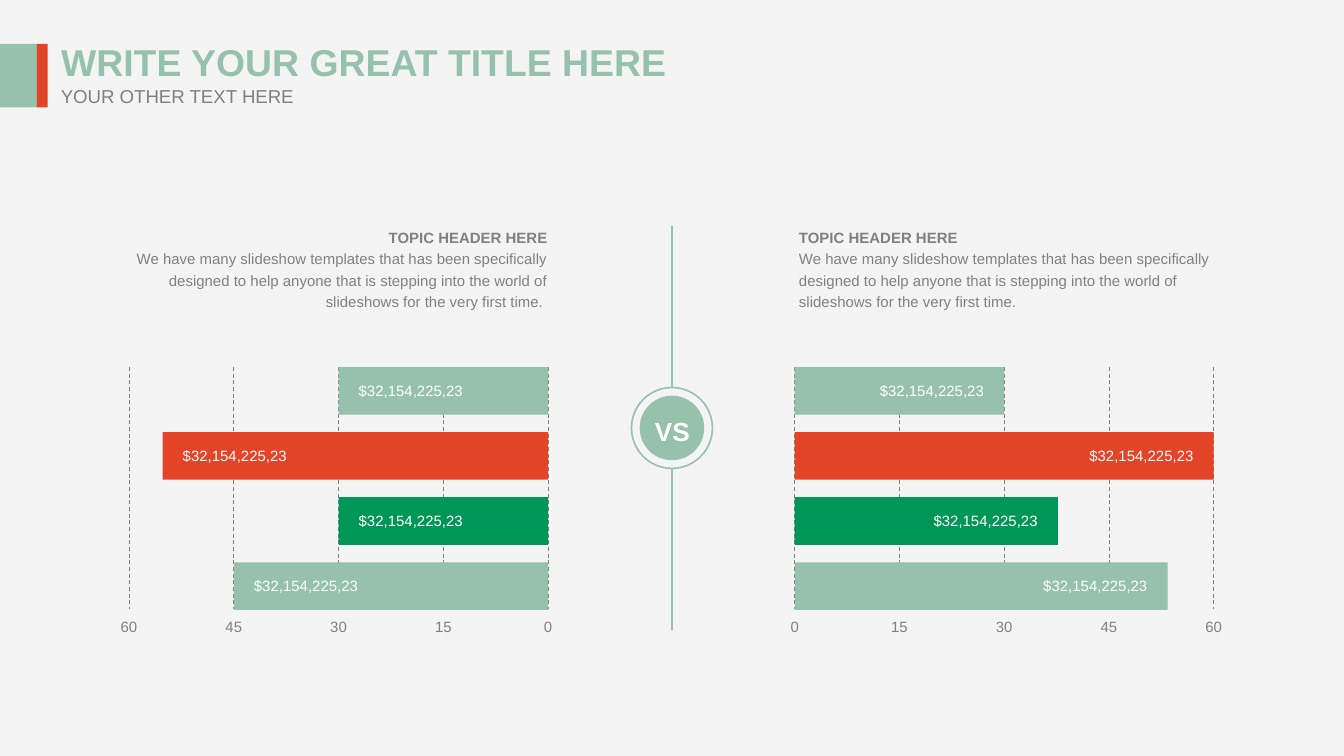
from lxml import etree
from pptx import Presentation
from pptx import util as u
from pptx.dml.color import RGBColor
from pptx.enum import dml, shapes, text
from pptx.oxml.ns import qn

SAGE = RGBColor(0x95, 0xC1, 0xAD)
RED = RGBColor(0xE3, 0x43, 0x26)
GREEN = RGBColor(0x00, 0x96, 0x58)
GRAY = RGBColor(0x80, 0x80, 0x80)
WHITE = RGBColor(0xFF, 0xFF, 0xFF)
BACKGROUND = RGBColor(0xF4, 0xF4, 0xF4)
LEFT, CENTER, RIGHT = text.PP_ALIGN.LEFT, text.PP_ALIGN.CENTER, text.PP_ALIGN.RIGHT

TITLE = "WRITE YOUR GREAT TITLE HERE"
SUBTITLE = "YOUR OTHER TEXT HERE"
HEADER = "TOPIC HEADER HERE"
BODY = ("We have many slideshow templates that has been specifically designed to help "
        "anyone that is stepping into the world of slideshows for the very first time.")
AMOUNT = "$32,154,225,23"
TICKS = [0, 15, 30, 45, 60]
BAR_COLORS = [SAGE, RED, GREEN, SAGE]
SIDES = [
    dict(values=[30, 55.2, 30, 45], zero=10.36, direction=-1, align=LEFT,
         placeholder=1, topic_left=2.35, topic_align=RIGHT, body=BODY + " "),
    dict(values=[30, 60, 37.7, 53.4], zero=15.02, direction=1, align=RIGHT,
         placeholder=3, topic_left=15.1, topic_align=LEFT, body=BODY),
]

UNIT = 0.132
CHART_TOP, CHART_BOTTOM = 6.94, 11.51
BAR_HEIGHT, BAR_PITCH = 0.9, 1.23
LABEL_WIDTH, LABEL_HEIGHT, LABEL_GAP = 2.49, 0.58, 0.13
CENTER_X, CENTER_Y = 12.7, 8.09
RING, DISC = 1.53, 1.22
DIVIDER_TOP, DIVIDER_BOTTOM = 4.27, 11.91


def place(shape, left, top, width, height):
    shape.left, shape.top = u.Cm(left), u.Cm(top)
    shape.width, shape.height = u.Cm(width), u.Cm(height)


def write(shape, lines, size, color, bold=False, align=LEFT, wrap=False, margins=True):
    frame = shape.text_frame
    frame.text = "\n".join(lines)
    frame.word_wrap = wrap
    frame.auto_size = text.MSO_AUTO_SIZE.NONE
    frame.vertical_anchor = text.MSO_ANCHOR.TOP
    if not margins:
        frame.margin_left = frame.margin_right = frame.margin_top = frame.margin_bottom = 0
    for paragraph in frame.paragraphs:
        paragraph.alignment = align
        paragraph.space_before = u.Pt(0)
        for run in paragraph.runs:
            run.font.name = "Arial"
            run.font.size = u.Pt(size)
            run.font.bold = bold
            run.font.color.rgb = color


def add_text(slide, box, *content, **options):
    shape = slide.shapes.add_textbox(*map(u.Cm, box))
    write(shape, *content, **options)


def add_filled(slide, kind, box, color):
    shape = slide.shapes.add_shape(kind, *map(u.Cm, box))
    shape.shadow.inherit = False
    shape.fill.solid()
    shape.fill.fore_color.rgb = color
    shape.line.fill.background()
    return shape


def add_vertical(slide, x, top, bottom, color, width, dash=None):
    line = slide.shapes.add_connector(
        shapes.MSO_CONNECTOR.STRAIGHT, u.Cm(x), u.Cm(top), u.Cm(x), u.Cm(bottom))
    line.line.color.rgb = color
    line.line.width = u.Pt(width)
    if dash:
        line.line.dash_style = dash
    etree.SubElement(line._element.spPr, qn("a:effectLst"))


def centered(size):
    return CENTER_X - size / 2, CENTER_Y - size / 2, size, size


def add_heading(slide):
    for left, width, color in [(0, 0.7, SAGE), (0.7, 0.2, RED)]:
        add_filled(slide, shapes.MSO_SHAPE.RECTANGLE, (left, 0.83, width, 1.2), color)
    title = slide.shapes.title
    place(title, 0.9, 0.61, 12.01, 1.1)
    write(title, [TITLE], 20, SAGE, bold=True)
    add_text(slide, (0.9, 1.48, 4.93, 0.68), [SUBTITLE], 10, GRAY)


def add_divider(slide):
    add_filled(slide, shapes.MSO_SHAPE.OVAL, centered(DISC), SAGE)
    ring = add_filled(slide, shapes.MSO_SHAPE.OVAL, centered(RING), SAGE)
    ring.fill.background()
    ring.line.color.rgb = SAGE
    ring.line.width = u.Pt(0.88)
    add_vertical(slide, CENTER_X, DIVIDER_TOP, CENTER_Y - RING / 2, SAGE, 0.88)
    add_vertical(slide, CENTER_X, CENTER_Y + RING / 2, DIVIDER_BOTTOM, SAGE, 0.88)
    add_text(slide, (12.38, 7.85, 0.66, 0.58), ["VS"], 14, WHITE,
             bold=True, align=CENTER, margins=False)


def add_topic(slide, side):
    topic = slide.placeholders[side["placeholder"]]
    place(topic, side["topic_left"], 4.25, 8, 1.63)
    write(topic, [HEADER, side["body"]], 8, GRAY,
          align=side["topic_align"], wrap=True, margins=False)
    for paragraph in topic.text_frame.paragraphs:
        paragraph.line_spacing = 1.2
    topic.text_frame.paragraphs[0].runs[0].font.bold = True


def add_bars(slide, side):
    zero, direction = side["zero"], side["direction"]
    for tick in TICKS:
        x = zero + direction * tick * UNIT
        add_vertical(slide, x, CHART_TOP, CHART_BOTTOM, GRAY, 0.5, dml.MSO_LINE.DASH)
        add_text(slide, (x - 0.15, 11.67, 0.3, 0.33), [str(tick)], 8, GRAY,
                 align=CENTER, margins=False)
    for row, (value, color) in enumerate(zip(side["values"], BAR_COLORS)):
        top = CHART_TOP + row * BAR_PITCH
        length = value * UNIT
        end = zero + direction * length
        add_filled(slide, shapes.MSO_SHAPE.RECTANGLE,
                   (min(zero, end), top, length, BAR_HEIGHT), color)
        label_left = end + LABEL_GAP if direction < 0 else end - LABEL_GAP - LABEL_WIDTH
        add_text(slide, (label_left, top + 0.14, LABEL_WIDTH, LABEL_HEIGHT),
                 [AMOUNT], 8, WHITE, align=side["align"])


def main():
    presentation = Presentation()
    presentation.slide_width, presentation.slide_height = u.Cm(25.4), u.Cm(14.29)
    slide = presentation.slides.add_slide(presentation.slide_layouts.get_by_name("Comparison"))
    slide.background.fill.solid()
    slide.background.fill.fore_color.rgb = BACKGROUND
    for index in (2, 4):
        unused = slide.placeholders[index]._element
        unused.getparent().remove(unused)
    add_divider(slide)
    for side in SIDES:
        add_bars(slide, side)
        add_topic(slide, side)
    add_heading(slide)
    presentation.save("out.pptx")


if __name__ == "__main__":
    main()
